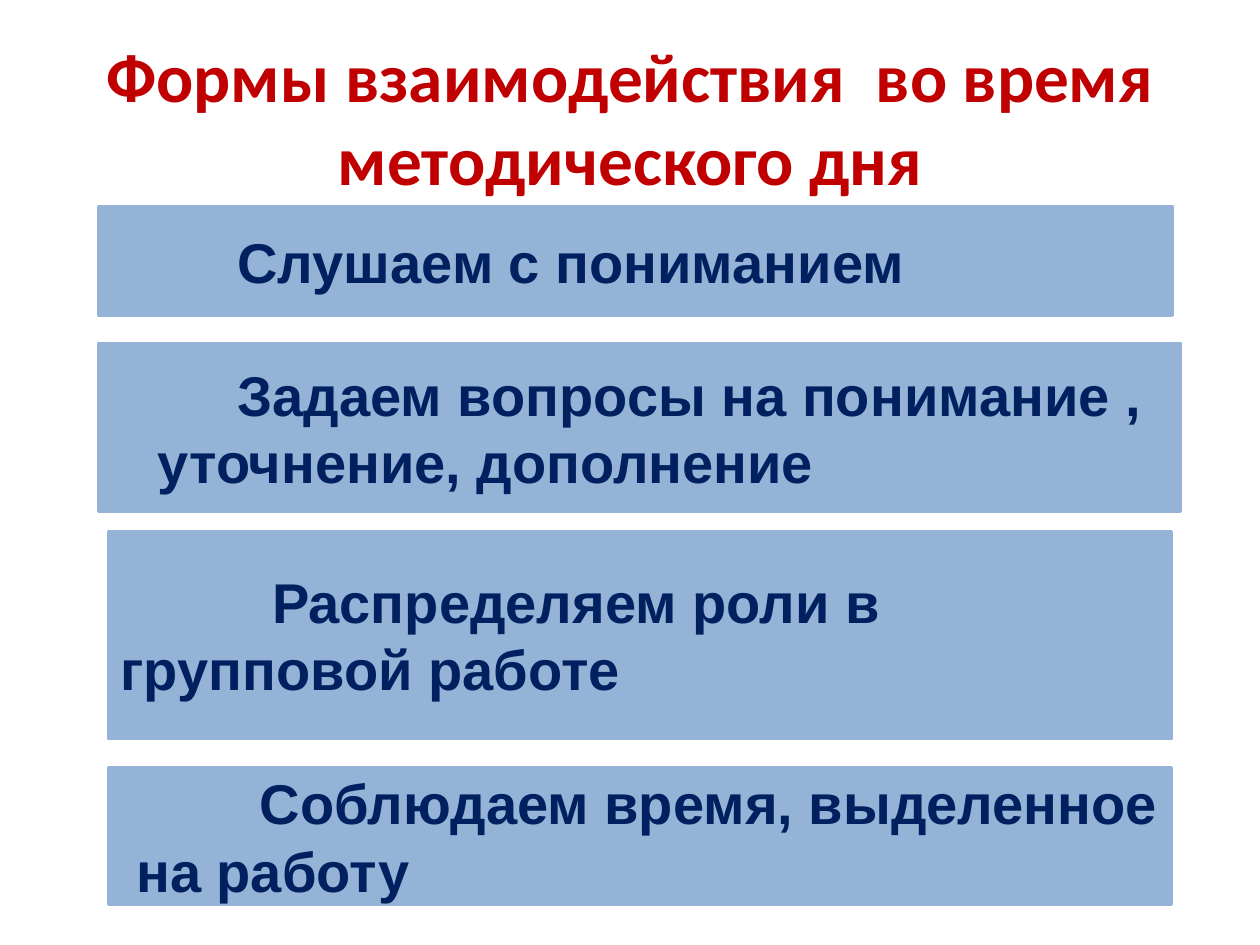
from pptx import Presentation
from pptx.dml.color import RGBColor
from pptx.enum.shapes import MSO_SHAPE as Preset
from pptx.enum.text import MSO_ANCHOR as Anchor, MSO_AUTO_SIZE as AutoSize, PP_ALIGN as Align
from pptx.util import Pt

COLORS = {"title": "C00000", "panel": "95B3D7", "text": "002060"}
TITLE_ONLY = 5

# Box (left, top, width, height), text, left margin, first-line start
PANELS = [
    ((56.2, 118.1, 613.4, 61.9), "Слушаем с пониманием", 0, 72.3),
    ((56.2, 196.6, 618.5, 95.8),
     "Задаем вопросы на понимание , уточнение, дополнение", 26.7, 72.3),
    ((61.9, 303.8, 607.7, 118.1), "Распределяем роли в групповой работе", 0, 86.5),
    ((61.9, 438.5, 607.7, 78.5), "Соблюдаем время, выделенное на работу", 8.9, 79.6),
]


def color(name):
    return RGBColor.from_string(COLORS[name])


def write(shape, text, font, size, color_name, align):
    frame = shape.text_frame
    frame.text = text
    frame.word_wrap = True
    frame.auto_size = AutoSize.NONE
    frame.vertical_anchor = Anchor.MIDDLE
    para = frame.paragraphs[0]
    para.alignment = align
    span = para.runs[0].font
    span.name, span.size, span.bold = font, Pt(size), True
    span.color.rgb = color(color_name)
    return para


def place_title(page, box):
    title = page.shapes.title
    title.left, title.top, title.width, title.height = map(Pt, box)
    write(title, "Формы взаимодействия  во время методического дня",
          "Calibri", 39.6, "title", Align.CENTER)


def place_panel(page, box, text, margin, first_line):
    panel = page.shapes.add_shape(Preset.RECTANGLE, *map(Pt, box))
    panel.shadow.inherit = False
    panel.fill.solid()
    panel.fill.fore_color.rgb = color("panel")
    panel.line.color.rgb = color("panel")
    panel.line.width = Pt(2)
    para = write(panel, text, "Arial", 32, "text", Align.LEFT)
    # Indents set where the first and the following lines start
    props = para._p.get_or_add_pPr()
    props.set("marL", str(int(Pt(margin))))
    props.set("indent", str(int(Pt(first_line - margin))))


def main():
    deck = Presentation()
    deck.slide_width, deck.slide_height = Pt(720), Pt(540)
    page = deck.slides.add_slide(deck.slide_layouts[TITLE_ONLY])
    # Heading
    place_title(page, (36, 21.6, 648, 90))
    # Forms of interaction
    for panel in PANELS:
        place_panel(page, *panel)
    deck.save("out.pptx")


if __name__ == "__main__":
    main()
